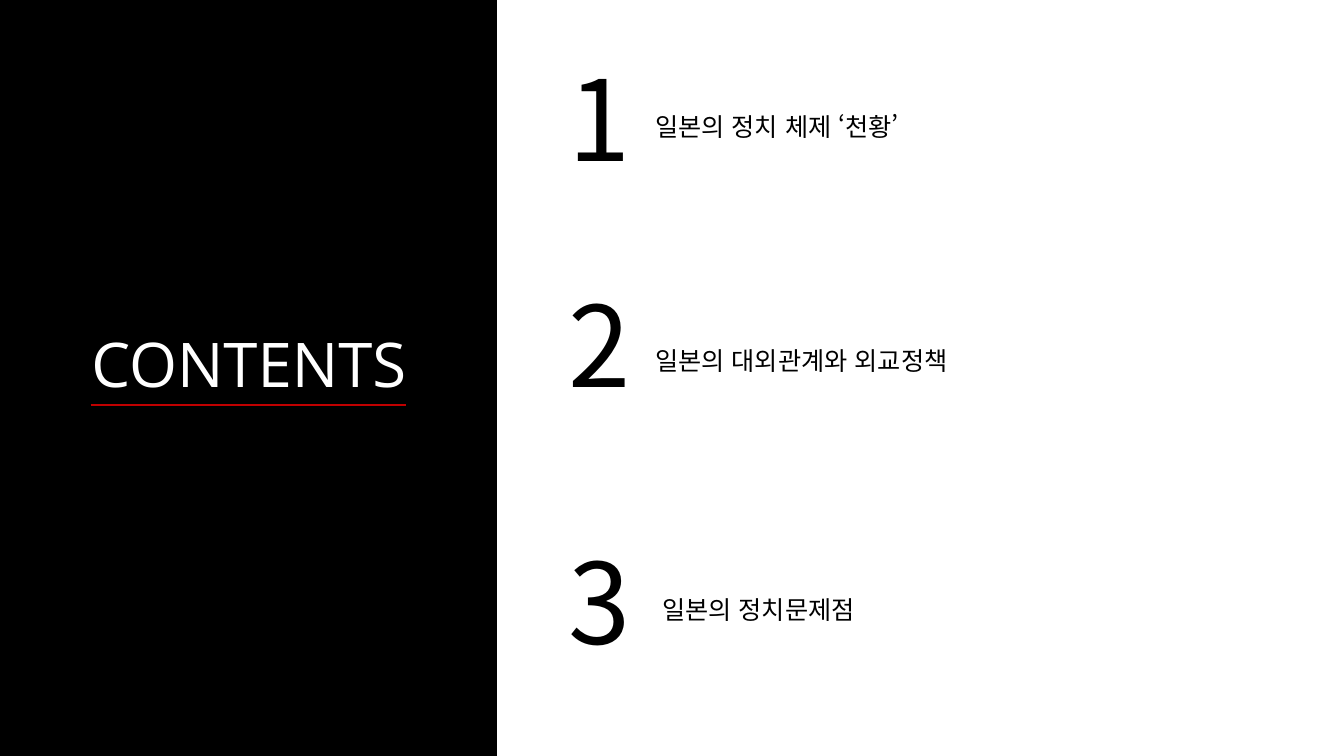
from dataclasses import dataclass

from lxml import etree
from pptx import Presentation
from pptx import util as u
from pptx.dml.color import RGBColor
from pptx.enum import lang, shapes, text
from pptx.oxml.ns import qn

WIDTH, HEIGHT = u.Inches(13.33), u.Inches(7.5)


@dataclass(frozen=True)
class Theme:
    black: str = "000000"
    white: str = "FFFFFF"
    accent: str = "C00000"
    latin: str = "Open Sans"
    korean: str = "Noto Sans CJK KR"
    title: int = 44
    number: int = 80
    topic: int = 18
    rule: float = 1.5


THEME = Theme()

# number top, topic left, topic top, topic width (percent of the slide), wording
TOPICS = [
    (5.87, 48, 12.13, 23, "일본의 정치 체제 ‘천황’"),
    (35.73, 48, 43.07, 24.75, "일본의 대외관계와 외교정책"),
    (69.73, 48.53, 76, 16.8, "일본의 정치문제점"),
]


def share(x, y):
    """Turn percentages of the slide's width and height into lengths."""
    return round(WIDTH * x / 100), round(HEIGHT * y / 100)


def write(sp, words, size, font, color, align=text.PP_ALIGN.LEFT, spacing=1.0):
    tf = sp.text_frame
    tf.word_wrap = False
    tf.auto_size = text.MSO_AUTO_SIZE.SHAPE_TO_FIT_TEXT
    tf.vertical_anchor = text.MSO_ANCHOR.TOP
    p = tf.paragraphs[0]
    p.alignment, p.line_spacing = align, spacing
    r = p.add_run()
    r.text = words
    r.font.size, r.font.name = u.Pt(size), font
    r.font.language_id = lang.MSO_LANGUAGE_ID.KOREAN
    r.font.color.rgb = RGBColor.from_string(color)
    etree.SubElement(r.font._element, qn("a:ea"), typeface=font)


def add_panel(slide):
    sp = slide.shapes.add_shape(
        shapes.MSO_SHAPE.RECTANGLE, 0, 0, *share(36.98, 100))
    sp.shadow.inherit = False
    sp.fill.solid()
    sp.fill.fore_color.rgb = RGBColor.from_string(THEME.black)
    sp.line.fill.background()
    slide.shapes._spTree.insert(2, sp._element)  # behind the title


def set_title(slide, words):
    sp = slide.shapes.title
    sp.left, sp.top = share(5.25, 42.4)
    sp.width, sp.height = share(26.55, 11.2)
    write(sp, words, THEME.title, THEME.latin, THEME.white,
          text.PP_ALIGN.CENTER)


def add_underline(slide):
    line = slide.shapes.add_connector(
        shapes.MSO_CONNECTOR.STRAIGHT, *share(6.75, 53.6), *share(30.23, 53.6))
    line.line.color.rgb = RGBColor.from_string(THEME.accent)
    line.line.width = u.Pt(THEME.rule)
    etree.SubElement(line._element.spPr, qn("a:effectLst"))


def add_topic(slide, number, number_top, left, top, width, words):
    group = slide.shapes.add_group_shape()
    sp = group.shapes.add_textbox(*share(41.55, number_top), *share(6.15, 19.33))
    write(sp, str(number), THEME.number, THEME.korean, THEME.black)
    sp = group.shapes.add_textbox(*share(left, top), *share(width, 6.67))
    write(sp, words, THEME.topic, THEME.korean, THEME.black, spacing=1.5)


def main():
    prs = Presentation()
    prs.slide_width, prs.slide_height = WIDTH, HEIGHT
    slide = prs.slides.add_slide(prs.slide_layouts.get_by_name("Title Only"))
    add_panel(slide)
    set_title(slide, "CONTENTS")
    add_underline(slide)
    for number, topic in enumerate(TOPICS, 1):
        add_topic(slide, number, *topic)
    prs.save("out.pptx")


if __name__ == "__main__":
    main()
